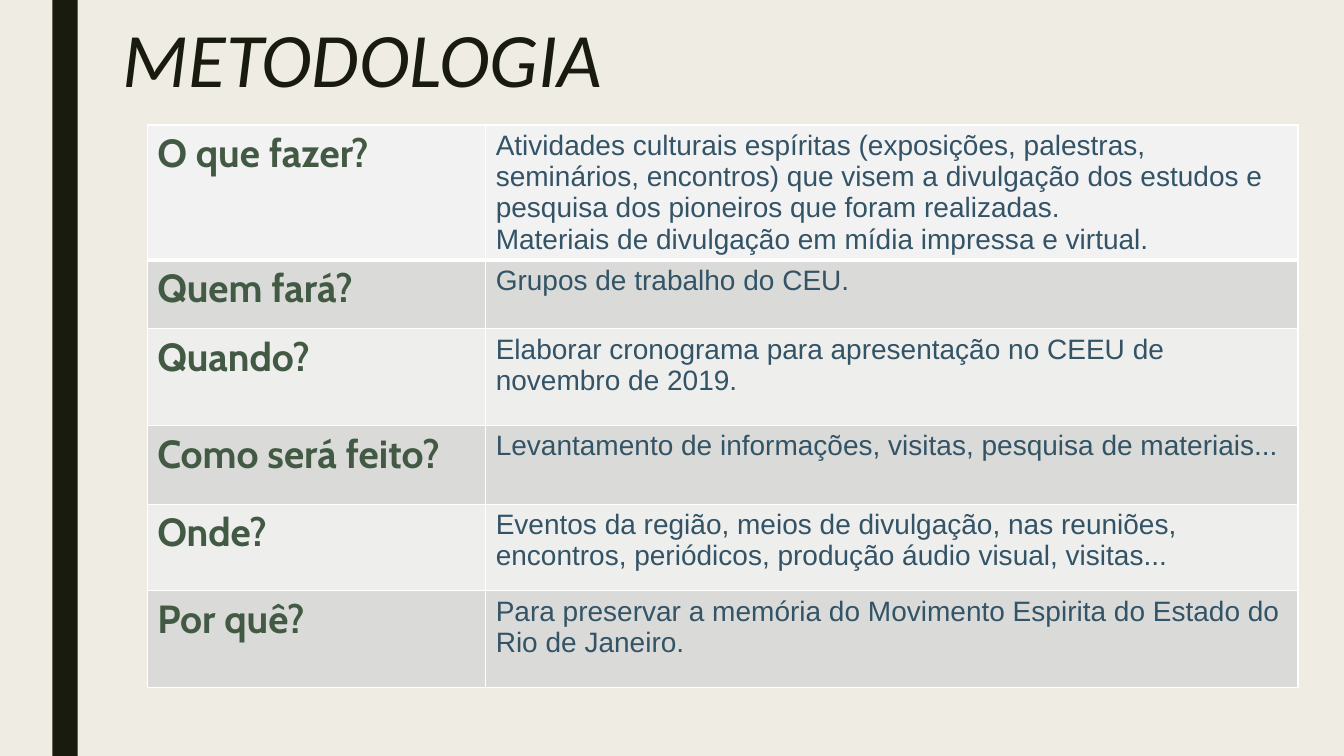
import pptx
import pptx.util
import pptx.dml.color
import pptx.enum.shapes
import pptx.enum.text
import pptx.oxml
import pptx.oxml.ns

Cm = pptx.util.Cm
Pt = pptx.util.Pt


def color(code):
    return pptx.dml.color.RGBColor.from_string(code)


class Deck:
    """Holds the colours and fonts of the deck and the slide being built."""

    paper, ink, green, blue = "EFEDE3", "191B0E", "425A43", "335366"
    white, head, light, dark = "FFFFFF", "F2F2F2", "EEEEED", "DADBD9"

    def __init__(self):
        self.prs = pptx.Presentation()
        self.prs.slide_width, self.prs.slide_height = Cm(33.87), Cm(19.05)
        self.slide = self.prs.slides.add_slide(self.prs.slide_layouts[5])
        self.paint(self.slide.background, self.paper)

    def paint(self, item, code):
        item.fill.solid()
        item.fill.fore_color.rgb = color(code)

    def style(self, frame, font, size, code, bold=False, italic=False):
        for para in frame.paragraphs:
            for run in para.runs:
                run.font.name, run.font.size = font, Pt(size)
                run.font.bold, run.font.italic = bold, italic
                run.font.color.rgb = color(code)

    def bar(self, left, width):
        kind = pptx.enum.shapes.MSO_SHAPE.RECTANGLE
        shape = self.slide.shapes.add_shape(
            kind, Cm(left), 0, Cm(width), self.prs.slide_height)
        shape.shadow.inherit = False
        self.paint(shape, self.ink)
        shape.line.fill.background()

    def title(self, text, left, top, width, height):
        shape = self.slide.shapes.title
        shape.left, shape.top = Cm(left), Cm(top)
        shape.width, shape.height = Cm(width), Cm(height)
        frame = shape.text_frame
        frame.text = text
        frame.auto_size = pptx.enum.text.MSO_AUTO_SIZE.NONE
        frame.vertical_anchor = pptx.enum.text.MSO_ANCHOR.BOTTOM
        frame.paragraphs[0].alignment = pptx.enum.text.PP_ALIGN.LEFT
        frame.paragraphs[0].line_spacing = 0.89
        self.style(frame, "Calibri", 55, self.ink, italic=True)

    def border(self, cell, sides):
        props = cell._tc.get_or_add_tcPr()
        for spot, (side, width) in enumerate(sides.items()):
            props.insert(spot, pptx.oxml.parse_xml(
                f'<a:ln{side} {pptx.oxml.ns.nsdecls("a")} w="{Pt(width)}">'
                f'<a:solidFill><a:srgbClr val="{self.white}"/></a:solidFill>'
                f'</a:ln{side}>'))

    def table(self, rows, left, top, widths, heights):
        grid = self.slide.shapes.add_table(
            len(rows), len(widths), Cm(left), Cm(top),
            Cm(sum(widths)), Cm(sum(heights))).table
        grid.first_row = grid.horz_banding = False
        for col, width in zip(grid.columns, widths):
            col.width = Cm(width)
        for i, (row, height) in enumerate(zip(rows, heights)):
            grid.rows[i].height = Cm(height)
            fill = self.head if i == 0 else (self.light, self.dark)[i % 2]
            for j, text in enumerate(row):
                cell = grid.cell(i, j)
                cell.text_frame.text = text
                if j == 0:
                    self.style(cell.text_frame, "Cabin", 28, self.green, True)
                else:
                    self.style(cell.text_frame, "Arial", 20, self.blue)
                self.paint(cell, fill)
                self.border(cell, {"L": 1, "R": 1, "T": 3 if i == 1 else 1,
                                   "B": 3 if i == 0 else 1})


def main():
    deck = Deck()
    deck.bar(1.32, 0.64)
    deck.title("METODOLOGIA", 2.84, 0.03, 26.67, 2.72)
    rows = [
        ("O que fazer?",
         "Atividades culturais espíritas (exposições, palestras, seminários, "
         "encontros) que visem a divulgação dos estudos e pesquisa dos "
         "pioneiros que foram realizadas.\n"
         "Materiais de divulgação em mídia impressa e virtual."),
        ("Quem fará?", "Grupos de trabalho do CEU."),
        ("Quando?",
         "Elaborar cronograma para apresentação no CEEU de novembro de 2019."),
        ("Como será feito?",
         "Levantamento de informações, visitas, pesquisa de materiais..."),
        ("Onde?",
         "Eventos da região, meios de divulgação, nas reuniões, encontros, "
         "periódicos, produção áudio visual, visitas..."),
        ("Por quê?",
         "Para preservar a memória do Movimento Espirita do Estado do "
         "Rio de Janeiro."),
    ]
    deck.table(rows, 3.71, 3.15, [8.53, 20.47],
               [3.4, 1.73, 2.44, 1.98, 2.18, 2.44])
    deck.prs.save("out.pptx")


if __name__ == "__main__":
    main()
